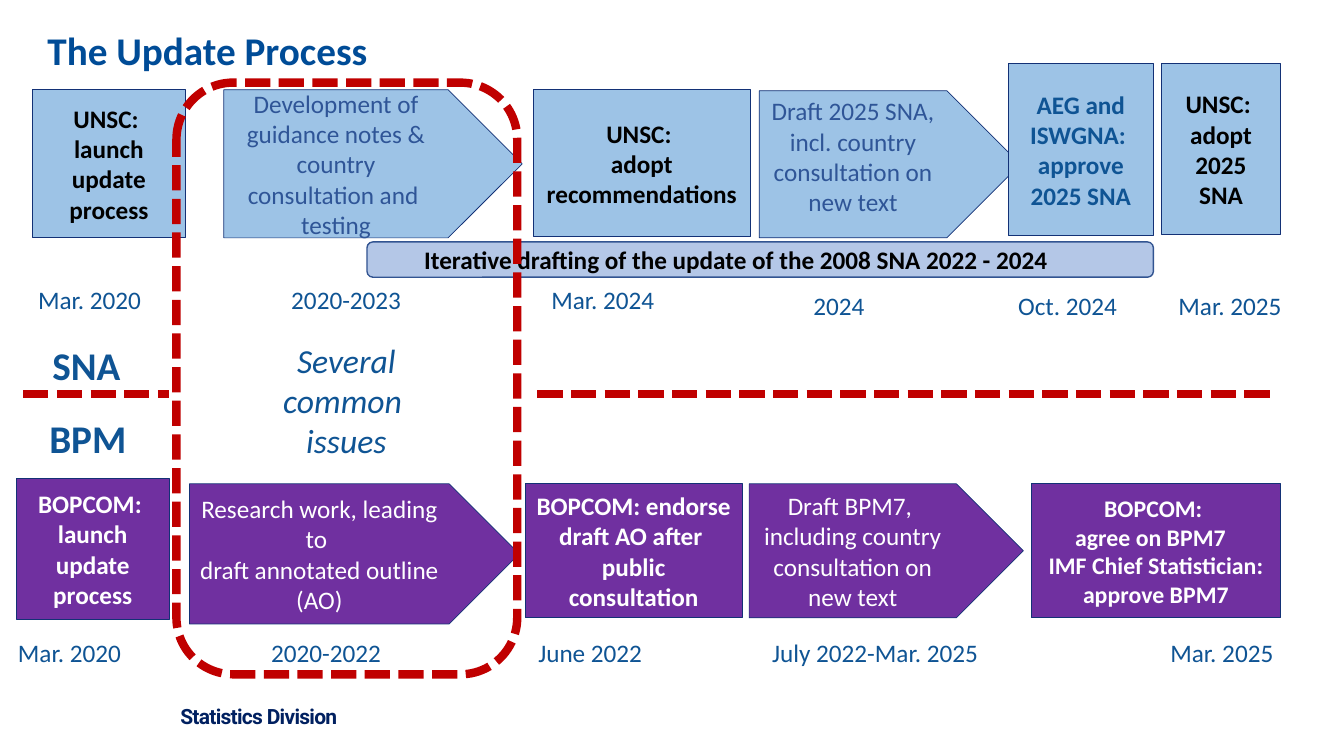
from dataclasses import dataclass

from lxml import etree
from pptx import Presentation
from pptx import util as u
from pptx.dml.color import RGBColor
from pptx.enum import dml, shapes, text
from pptx.oxml.ns import qn

CELL = u.Inches(0.1)  # the slide is a grid of 133.3 columns by 75 rows
WHITE = RGBColor(0xFF, 0xFF, 0xFF)
BLACK = RGBColor(0, 0, 0)
TITLE_BLUE = RGBColor(0x00, 0x4C, 0x97)
LABEL_BLUE = RGBColor(0x0F, 0x54, 0x94)
ARROW_BLUE = RGBColor(0x2F, 0x55, 0x97)
EDGE_BLUE = RGBColor(0x13, 0x31, 0x76)
SKY = RGBColor(0x9D, 0xC3, 0xE6)
BAR_FILL = RGBColor(0xB4, 0xC7, 0xE7)
BAR_EDGE = RGBColor(0x32, 0x54, 0x91)
PURPLE = RGBColor(0x70, 0x30, 0xA0)
RED = RGBColor(0xC0, 0x00, 0x00)
NAVY = RGBColor(0x00, 0x20, 0x60)

BOX = shapes.MSO_SHAPE.RECTANGLE
ARROW = shapes.MSO_SHAPE.RIGHT_ARROW
ROUNDED = shapes.MSO_SHAPE.ROUNDED_RECTANGLE
LEFT, CENTER = text.PP_ALIGN.LEFT, text.PP_ALIGN.CENTER
TOP, MIDDLE = text.MSO_ANCHOR.TOP, text.MSO_ANCHOR.MIDDLE


@dataclass
class Area:
    """A box measured in grid cells."""
    left: float
    top: float
    width: float
    height: float

    def inner(self, left, top, width, height):
        return Area(self.left + left, self.top + top, width, height)

    def emu(self):
        return [round(n * CELL) for n in (self.left, self.top, self.width, self.height)]


def write(frame, words, color, size=18, bold=False, italic=False,
          align=CENTER, anchor=MIDDLE, face="Calibri"):
    frame.text = words
    frame.vertical_anchor = anchor
    for paragraph in frame.paragraphs:
        paragraph.alignment = align
        font = paragraph.font
        font.name, font.size, font.color.rgb = face, u.Pt(size), color
        font.bold, font.italic = bold, italic


def add_block(slide, kind, area, fill, edge=None, weight=0.5):
    block = slide.shapes.add_shape(kind, *area.emu())
    block.shadow.inherit = False
    if fill is None:
        block.fill.background()
    else:
        block.fill.solid()
        block.fill.fore_color.rgb = fill
    if edge is None:
        block.line.fill.background()
    else:
        block.line.color.rgb = edge
        block.line.width = u.Pt(weight)
    if kind == ARROW:
        block.adjustments[0] = 1
    return block


def add_label(slide, area, words, size=18, align=LEFT, **style):
    frame = slide.shapes.add_textbox(*area.emu()).text_frame
    frame.word_wrap = False
    frame.auto_size = text.MSO_AUTO_SIZE.SHAPE_TO_FIT_TEXT
    write(frame, words, LABEL_BLUE, size, align=align, anchor=TOP, **style)


def add_title(slide, area):
    title = slide.shapes.title
    title.left, title.top, title.width, title.height = area.emu()
    write(title.text_frame, "The Update Process", TITLE_BLUE, 28, True,
          align=LEFT, anchor=TOP)
    title.text_frame.auto_size = text.MSO_AUTO_SIZE.NONE


def add_footer(slide, area):
    frame = add_block(slide, BOX, area, WHITE).text_frame
    write(frame, "Statistics Division", NAVY, 15, True,
          align=LEFT, anchor=TOP, face="Roboto")
    frame.paragraphs[0].runs[0]._r.get_or_add_rPr().set("spc", "-50")


def add_lane(slide, lane, fill, steps, dates):
    """Place one row of process steps, with its dates beneath."""
    for kind, place, words, style in steps:
        block = add_block(slide, kind, lane.inner(*place), fill, EDGE_BLUE)
        write(block.text_frame, words, bold=kind == BOX, **style)
    for left, top, width, date in dates:
        add_label(slide, lane.inner(left, top, width, 3.4), date)


def add_bpm_lane(slide, lane):
    white = {"color": WHITE}
    steps = [
        (BOX, (0, 0, 15.2, 13.9), "BOPCOM: \vlaunch update process", white),
        (ARROW, (17.2, 0.5, 32.7, 13.9),
         "Research work, leading to \ndraft annotated outline (AO)", white),
        (BOX, (50.5, 0.5, 21.5, 13.3),
         "BOPCOM: endorse draft AO after  public consultation", white),
        (ARROW, (72.7, 0.5, 27.2, 13.3),
         "Draft BPM7, \vincluding country consultation on new text", white),
        (BOX, (100.7, 0.5, 24.7, 13.3),
         "BOPCOM: \nagree on BPM7  \nIMF Chief Statistician:\napprove BPM7",
         {"color": WHITE, "size": 17}),
    ]
    dates = [(-0.8, 15.2, 14.4, "Mar. 2020"), (24.3, 15.2, 15.9, "2020-2022"),
             (50.8, 15.2, 12.5, "June 2022"), (74, 15.2, 22.7, "July 2022-Mar. 2025"),
             (113.5, 15.2, 14.4, "Mar. 2025")]
    add_lane(slide, lane, PURPLE, steps, dates)


def add_sna_lane(slide, lane):
    black, blue = {"color": BLACK}, {"color": ARROW_BLUE}
    steps = [
        (BOX, (0, 2.6, 15.2, 14.7), "UNSC: \vlaunch update process", black),
        (ARROW, (19, 2.6, 29.6, 14.7),
         "Development of guidance notes & country consultation and  testing", blue),
        (BOX, (49.7, 2.6, 21.5, 14.6), "UNSC: \vadopt recommendations", black),
        (ARROW, (72.1, 2.7, 25.9, 14.6),
         "Draft 2025 SNA, incl. country consultation on new text",
         {"color": ARROW_BLUE, "anchor": TOP}),
        (BOX, (96.8, 0, 14.4, 17.1), "AEG and ISWGNA: \vapprove 2025 SNA",
         {"color": LABEL_BLUE}),
        (BOX, (112, 0, 11.8, 17), "UNSC: \vadopt 2025 SNA", black),
    ]
    dates = [(-0.4, 21.4, 14.4, "Mar. 2020"), (24.7, 21.4, 15.9, "2020-2023"),
             (50.5, 21.4, 14.4, "Mar. 2024"), (76.5, 22, 8.4, "2024"),
             (96.8, 22, 14.4, "Oct. 2024"), (112.7, 22, 14.4, "Mar. 2025")]
    add_lane(slide, lane, SKY, steps, dates)
    drafting = add_block(slide, ROUNDED, lane.inner(33.2, 17.7, 78, 3.5),
                         BAR_FILL, BAR_EDGE, 1).text_frame
    write(drafting, "Iterative drafting of the update of the 2008 SNA 2022 - 2024",
          BLACK, bold=True, align=LEFT)
    drafting.margin_left = round(5.5 * CELL)


def dash(line):
    line.color.rgb = RED
    line.width = u.Pt(6)
    line.dash_style = dml.MSO_LINE.SQUARE_DOT


def add_divide(slide, band):
    """Separate the two lanes and name them."""
    middle = band.top + 5.9
    for start, end in ((0, 14.5), (51, band.width)):
        ends = (band.left + start, middle, band.left + end, middle)
        divider = slide.shapes.add_connector(
            shapes.MSO_CONNECTOR.STRAIGHT, *[round(n * CELL) for n in ends])
        dash(divider.line)
        etree.SubElement(divider._element.spPr, qn("a:effectLst"))
    add_label(slide, band.inner(1.9, 0.2, 8.9, 5.7), "SNA", 28, bold=True)
    add_label(slide, band.inner(1.6, 7.4, 9.8, 5.7), "BPM", 28, bold=True)
    add_label(slide, band.inner(23.3, 0, 17.5, 11), "Several\vcommon \vissues", 24,
              CENTER, italic=True)


def add_common_frame(slide, area):
    dash(add_block(slide, ROUNDED, area, None, RED, 6).line)


def main():
    deck = Presentation()
    deck.slide_width, deck.slide_height = u.Inches(13.33), u.Inches(7.5)
    slide = deck.slides.add_slide(deck.slide_layouts[5])
    add_title(slide, Area(3.7, 2.1, 125.8, 5.7))
    add_footer(slide, Area(16.9, 69.3, 58.4, 3.5))
    add_bpm_lane(slide, Area(1.6, 47.5, 125.4, 19))
    add_divide(slide, Area(2.3, 33.2, 123.7, 13.1))
    add_sna_lane(slide, Area(3.2, 6.3, 123.8, 25.4))
    add_common_frame(slide, Area(17.5, 8.2, 33.8, 58.7))
    deck.save("out.pptx")


if __name__ == "__main__":
    main()
